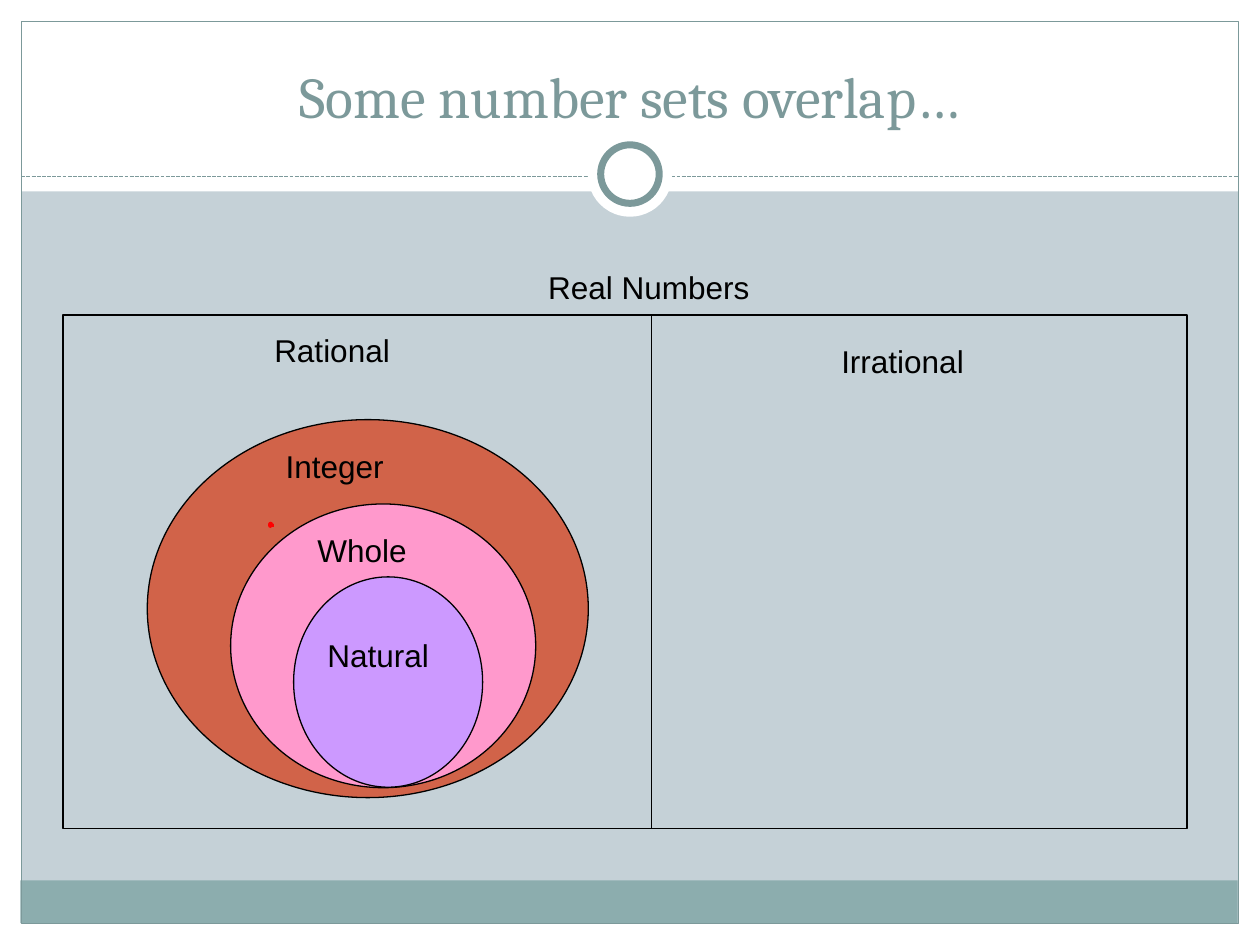
import pptx
import pptx.dml.color
import pptx.enum.dml
import pptx.enum.shapes
import pptx.enum.text
import pptx.oxml
import pptx.util
from pptx.util import Cm

KIND = pptx.enum.shapes.MSO_SHAPE
TEAL = "7C999A"
WHITE = "FFFFFF"
BLACK = "000000"
RED = "FF0000"


def color(code):
    return pptx.dml.color.RGBColor.from_string(code)


class Deck:
    def __init__(self):
        self.show = pptx.Presentation()
        self.show.slide_width = Cm(25.4)
        self.show.slide_height = Cm(19.05)
        self.slide = self.show.slides.add_slide(self.show.slide_layouts[5])
        self.items = self.slide.shapes
        self.face = "Arial"
        self.size = 18

    def ground(self, code):
        fill = self.slide.background.fill
        fill.solid()
        fill.fore_color.rgb = color(code)

    def paint(self, shape, fill, line, width):
        shape.shadow.inherit = False
        if fill:
            shape.fill.solid()
            shape.fill.fore_color.rgb = color(fill)
        else:
            shape.fill.background()
        if line:
            shape.line.color.rgb = color(line)
            shape.line.width = pptx.util.Pt(width)
        else:
            shape.line.fill.background()

    def shape(self, kind, box, fill=None, line=None, width=0.75):
        shape = self.items.add_shape(kind, *map(Cm, box))
        self.paint(shape, fill, line, width)

    def rule(self, start, end, line, dash=None):
        rule = self.items.add_connector(
            pptx.enum.shapes.MSO_CONNECTOR.STRAIGHT, *map(Cm, start + end))
        rule.line.color.rgb = color(line)
        rule.line.width = pptx.util.Pt(0.75)
        if dash:
            rule.line.dash_style = dash
        props = rule._element.spPr
        pptx.oxml.ns  # noqa
        props.append(pptx.oxml.parse_xml(
            '<a:effectLst xmlns:a="http://schemas.openxmlformats.org/drawingml/2006/main"/>'))

    def stroke(self, points, line, width):
        first, *rest = [tuple(map(Cm, point)) for point in points]
        pen = self.items.build_freeform(*first, scale=1.0)
        pen.add_line_segments(rest, close=False)
        self.paint(pen.convert_to_shape(), None, line, width)

    def style(self, para, face, size, code):
        for run in para.runs:
            run.font.name = face
            run.font.size = pptx.util.Pt(size)
            run.font.color.rgb = color(code)

    def label(self, text, left, top, width=3.18):
        box = self.items.add_textbox(Cm(left), Cm(top), Cm(width), Cm(1.02))
        frame = box.text_frame
        frame.word_wrap = True
        frame.text = text
        self.style(frame.paragraphs[0], self.face, self.size, BLACK)

    def title(self, text, box):
        title = self.items.title
        title.left, title.top, title.width, title.height = map(Cm, box)
        frame = title.text_frame
        frame.text = text
        frame.vertical_anchor = pptx.enum.text.MSO_ANCHOR.BOTTOM
        para = frame.paragraphs[0]
        para.alignment = pptx.enum.text.PP_ALIGN.CENTER
        self.style(para, "Cambria", 33, TEAL)
        self.items._spTree.append(title._element)


def main():
    deck = Deck()
    deck.ground("C5D1D7")
    for box in ((0, 18.62, 25.4, 0.43), (0, 0, 25.4, 3.86),
                (0, 0, 0.43, 19.05), (24.97, 0, 0.43, 19.05)):
        deck.shape(KIND.RECTANGLE, box, WHITE)
    deck.shape(KIND.RECTANGLE, (0.41, 17.75, 24.54, 0.86), "8CADAE")
    deck.shape(KIND.RECTANGLE, (0.43, 0.43, 24.54, 18.19), line=TEAL)
    deck.rule((0.43, 3.56), (24.97, 3.56), TEAL,
              pptx.enum.dml.MSO_LINE.SQUARE_DOT)
    deck.shape(KIND.OVAL, (11.85, 2.67, 1.7, 1.7), WHITE)
    deck.shape(KIND.OVAL, (12.11, 2.92, 1.18, 1.18), WHITE, TEAL, 4)
    deck.title("Some number sets overlap…", (0.84, 0.64, 23.7, 2.11))

    deck.shape(KIND.RECTANGLE, (1.27, 6.35, 22.66, 10.36), line=BLACK)
    deck.rule((13.13, 6.35), (13.13, 16.71), BLACK)
    for box, fill in (((2.97, 8.46, 8.89, 7.62), "D16349"),
                      ((4.65, 10.16, 6.15, 5.72), "FF99CC"),
                      ((5.92, 11.63, 3.81, 4.24), "CC99FF")):
        deck.shape(KIND.OVAL, box, fill, BLACK)

    deck.label("Real Numbers", 10.8, 5.28, 5.28)
    for text, left, top in (("Rational", 5.28, 6.55),
                            ("Irrational", 16.71, 6.78),
                            ("Integer", 5.51, 8.89),
                            ("Whole", 6.15, 10.59),
                            ("Natural", 6.35, 12.7)):
        deck.label(text, left, top)

    deck.stroke(((5.48, 10.57), (5.48, 10.6)), RED, 3)
    deck.stroke(((5.48, 10.62), (5.48, 10.59), (5.46, 10.59),
                 (5.46, 10.57), (5.46, 10.59)), RED, 3)
    deck.show.save("out.pptx")


if __name__ == "__main__":
    main()
